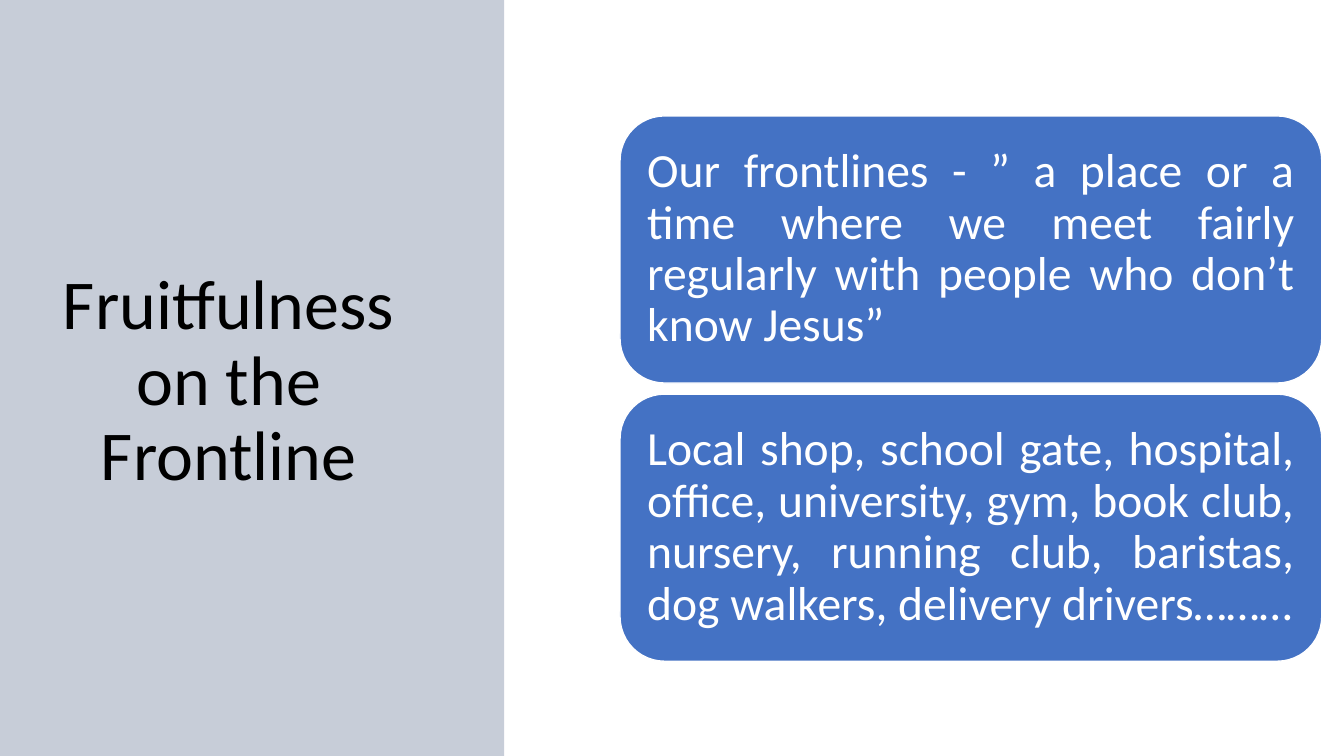
import math

from lxml import etree
from pptx import Presentation
from pptx import util as u
from pptx.dml.color import RGBColor
from pptx.enum import shapes, text
from pptx.oxml import ns

NAVY = RGBColor(0x20, 0x38, 0x64)
BLUE = RGBColor(0x44, 0x72, 0xC4)
WHITE = RGBColor(0xFF, 0xFF, 0xFF)
BLACK = RGBColor(0, 0, 0)

TITLE_FORMAT = {"size": u.Pt(50), "name": "Calibri", "color": BLACK}
CARD_FORMAT = {"size": u.Pt(34), "name": "Calibri", "color": WHITE}

CARD_TEXTS = [
    "Our frontlines - ” a place or a time where we meet fairly regularly "
    "with people who don’t know Jesus”",
    "Local shop, school gate, hospital, office, university, gym, book club, "
    "nursery, running club, baristas, dog walkers, delivery drivers………",
]


def place(shape, left, top, width, height):
    box = {"left": left, "top": top, "width": width, "height": height}
    for name, value in box.items():
        setattr(shape, name, u.Inches(value))


def write_text(shape, words, font_format, alignment, anchor):
    frame = shape.text_frame
    frame.text = words
    frame.word_wrap = True
    frame.auto_size = text.MSO_AUTO_SIZE.NONE
    frame.vertical_anchor = anchor
    paragraph = frame.paragraphs[0]
    paragraph.alignment = alignment
    paragraph.line_spacing = 0.9
    font = paragraph.runs[0].font
    for name, value in font_format.items():
        if name == "color":
            font.color.rgb = value
        else:
            setattr(font, name, value)


def add_wave_panel(slide, left, top, width, height, waves=5, depth=0.21, steps=100):
    edge = []
    for step in range(steps + 1):
        turn = 2 * math.pi * waves * step / steps
        x = left + width - depth * (1 + math.cos(turn)) / 2
        edge.append((x, top + height * step / steps))
    builder = slide.shapes.build_freeform(left, top, scale=u.Inches(1))
    builder.add_line_segments(edge + [(left, top + height)], close=True)
    panel = builder.convert_to_shape()
    panel.shadow.inherit = False
    panel.line.fill.background()
    panel.fill.solid()
    panel.fill.fore_color.rgb = NAVY
    color = panel.element.spPr.find(".//" + ns.qn("a:srgbClr"))
    etree.SubElement(color, ns.qn("a:alpha"), val="25000")
    return panel


def add_title_panel(slide, left, top, width, height):
    panel = add_wave_panel(slide, left, top, width, height)
    title = slide.shapes.title
    title.element.addprevious(panel.element)
    place(title, left + 0.5, top + 0.79, 3.54, 4.18)
    write_text(title, "Fruitfulness on the Frontline", TITLE_FORMAT,
               text.PP_ALIGN.CENTER, text.MSO_ANCHOR.BOTTOM)


def add_cards(slide, left, top, width, height, gap=0.11):
    card_height = (height - gap * (len(CARD_TEXTS) - 1)) / len(CARD_TEXTS)
    for index, words in enumerate(CARD_TEXTS):
        card_top = top + index * (card_height + gap)
        card = slide.shapes.add_shape(
            shapes.MSO_SHAPE.ROUNDED_RECTANGLE, u.Inches(left),
            u.Inches(card_top), u.Inches(width), u.Inches(card_height))
        card.shadow.inherit = False
        card.fill.solid()
        card.fill.fore_color.rgb = BLUE
        card.line.color.rgb = WHITE
        card.line.width = u.Pt(1)
        for side in ("left", "top", "right", "bottom"):
            setattr(card.text_frame, f"margin_{side}", u.Inches(0.14))
        write_text(card, words, CARD_FORMAT,
                   text.PP_ALIGN.JUSTIFY, text.MSO_ANCHOR.MIDDLE)


def main():
    presentation = Presentation()
    presentation.slide_width = u.Inches(13.33)
    presentation.slide_height = u.Inches(7.5)
    slide = presentation.slides.add_slide(presentation.slide_layouts[5])
    add_title_panel(slide, 0, 0, 4.83, 7.5)
    add_cards(slide, 6.15, 1.15, 6.96, 5.41)
    presentation.save("out.pptx")


if __name__ == "__main__":
    main()
